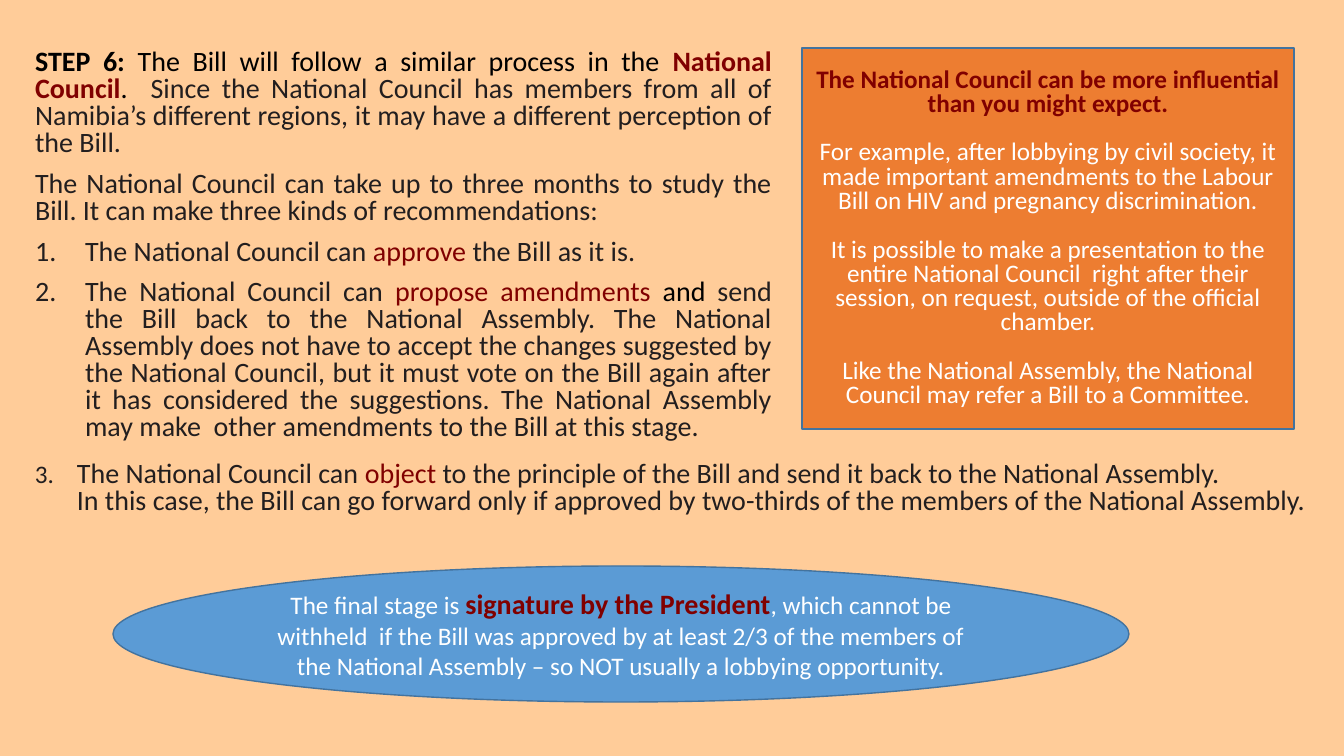
import pptx
import pptx.util
import pptx.dml.color
import pptx.enum.shapes
import pptx.enum.text
import lxml.etree
import pptx.oxml.ns

COLORS = {
    "background": "FFCC99", "black": "000000", "ink": "221E1F", "maroon": "800000",
    "white": "FFFFFF", "orange": "ED7D31", "blue": "5B9BD5", "outline": "43739E",
}
ALIGN = pptx.enum.text.PP_ALIGN
SHAPES = pptx.enum.shapes.MSO_SHAPE
FONT = "Calibri"
EMU_PER_PX = 914400 / 100.8

# Each run: text, colour, bold, size in points
INTRODUCTION = [
    [("STEP 6: ", "black", True, 20),
     ("The Bill will follow a similar process in the ", "black", False, 20),
     ("National Council", "maroon", True, 20),
     (".  ", "black", False, 20),
     ("Since the National Council has members from all of Namibia’s different regions, "
      "it may have a different perception of the Bill.", "ink", False, 20)],
    [("The National Council can take up to three months to study the Bill. "
      "It can make three kinds of recommendations:", "ink", False, 20)],
]
RECOMMENDATIONS = [
    [("The National Council can ", "ink", False, 20),
     ("approve ", "maroon", False, 20),
     ("the Bill as it is.", "ink", False, 20)],
    [("The National Council can ", "ink", False, 20),
     ("propose amendments ", "maroon", False, 20),
     ("and ", "black", False, 20),
     ("send the Bill back to the National Assembly. The National Assembly does not have to "
      "accept the changes suggested by the National Council, but it must vote on the Bill again "
      "after it has considered the suggestions. The National Assembly may make  other amendments "
      "to the Bill at this stage.", "ink", False, 20)],
]
OBJECTION = [
    [("The National Council can ", "ink", False, 20),
     ("object", "maroon", False, 20),
     (" to the principle of the Bill and send it back to the National Assembly.",
      "ink", False, 20),
     ("\n", "ink", False, 20),
     ("In this case, the Bill can go forward only if approved by two-thirds of the members "
      "of the National Assembly.", "ink", False, 20)],
]
INFLUENCE = [
    [("The National Council can be more influential than you might expect.",
      "maroon", True, 18)],
    [("For example, after lobbying by civil society, it made important amendments to the "
      "Labour Bill on HIV and pregnancy discrimination.", "white", False, 18)],
    [("It is possible to make a presentation to the entire National Council  right after "
      "their session, on request, outside of the official chamber.", "white", False, 18)],
    [("Like the National Assembly, the National Council may refer a Bill to a Committee.",
      "white", False, 18)],
]
FINAL_STAGE = [
    [("The final stage is ", "white", False, 18),
     ("signature by the President", "maroon", True, 20),
     (", which cannot be withheld  if the Bill was approved by at least 2/3 of the members "
      "of the National Assembly – so NOT usually a lobbying opportunity.", "white", False, 18)],
]

# Left, top, width, height in px
BODY_BOX = (25, 45, 757, 482)
OBJECTION_BOX = (25, 457, 1306, 66)
INFLUENCE_BOX = (802, 48, 492, 381)
FINAL_STAGE_BOX = (113, 566, 1016, 136)


def px(length):
    return pptx.util.Emu(round(length * EMU_PER_PX))


def rgb(name):
    return pptx.dml.color.RGBColor.from_string(COLORS[name])


def set_numbering(paragraph, indent, start, size_percent):
    """Number the paragraph with a hanging indent, or remove its bullet if indent is 0."""
    properties = paragraph._p.get_or_add_pPr()
    properties.set("marL", str(px(indent)))
    properties.set("indent", str(-px(indent)))

    def add(tag, **attributes):
        lxml.etree.SubElement(properties, pptx.oxml.ns.qn(tag), attributes)

    if indent:
        add("a:buSzPct", val=str(size_percent * 1000))
        add("a:buFont", typeface=FONT)
        add("a:buAutoNum", type="arabicPeriod", startAt=str(start))
    else:
        add("a:buNone")


def write(text_frame, paragraphs, alignment, line_spacing, gap=0,
          indents=None, start=1, number_percent=100):
    text_frame.word_wrap = True
    text_frame.auto_size = pptx.enum.text.MSO_AUTO_SIZE.NONE
    for index, runs in enumerate(paragraphs):
        paragraph = text_frame.add_paragraph() if index else text_frame.paragraphs[0]
        set_numbering(paragraph, indents[index] if indents else 0, start, number_percent)
        paragraph.alignment = alignment
        paragraph.line_spacing = line_spacing
        paragraph.space_before = pptx.util.Pt(gap if index else 0)
        for text, color, bold, size in runs:
            if text == "\n":
                paragraph.add_line_break()
                continue
            run = paragraph.add_run()
            run.text = text
            run.font.name = FONT
            run.font.size = pptx.util.Pt(size)
            run.font.bold = bold
            run.font.color.rgb = rgb(color)


def add_panel(slide, kind, box, fill):
    panel = slide.shapes.add_shape(kind, *map(px, box))
    panel.shadow.inherit = False
    panel.fill.solid()
    panel.fill.fore_color.rgb = rgb(fill)
    panel.line.color.rgb = rgb("outline")
    panel.line.width = pptx.util.Pt(1)
    panel.text_frame.vertical_anchor = pptx.enum.text.MSO_ANCHOR.MIDDLE
    return panel


def main():
    presentation = pptx.Presentation()
    presentation.slide_width, presentation.slide_height = px(1344), px(756)
    slide = presentation.slides.add_slide(presentation.slide_layouts[1])
    slide.background.fill.solid()
    slide.background.fill.fore_color.rgb = rgb("background")
    title = slide.shapes.title
    title.element.getparent().remove(title.element)

    body = slide.placeholders[1]
    body.left, body.top, body.width, body.height = map(px, BODY_BOX)
    indents = [0] * len(INTRODUCTION) + [50] * len(RECOMMENDATIONS)
    write(body.text_frame, INTRODUCTION + RECOMMENDATIONS, ALIGN.JUSTIFY, 0.8,
          gap=10, indents=indents)

    influence = add_panel(slide, SHAPES.RECTANGLE, INFLUENCE_BOX, "orange")
    write(influence.text_frame, INFLUENCE, ALIGN.CENTER, 0.8, gap=17.5)

    objection = slide.shapes.add_textbox(*map(px, OBJECTION_BOX))
    write(objection.text_frame, OBJECTION, ALIGN.LEFT, 0.8,
          indents=[42], start=3, number_percent=90)

    final_stage = add_panel(slide, SHAPES.OVAL, FINAL_STAGE_BOX, "blue")
    write(final_stage.text_frame, FINAL_STAGE, ALIGN.CENTER, 1.0)

    presentation.save("out.pptx")


if __name__ == "__main__":
    main()
